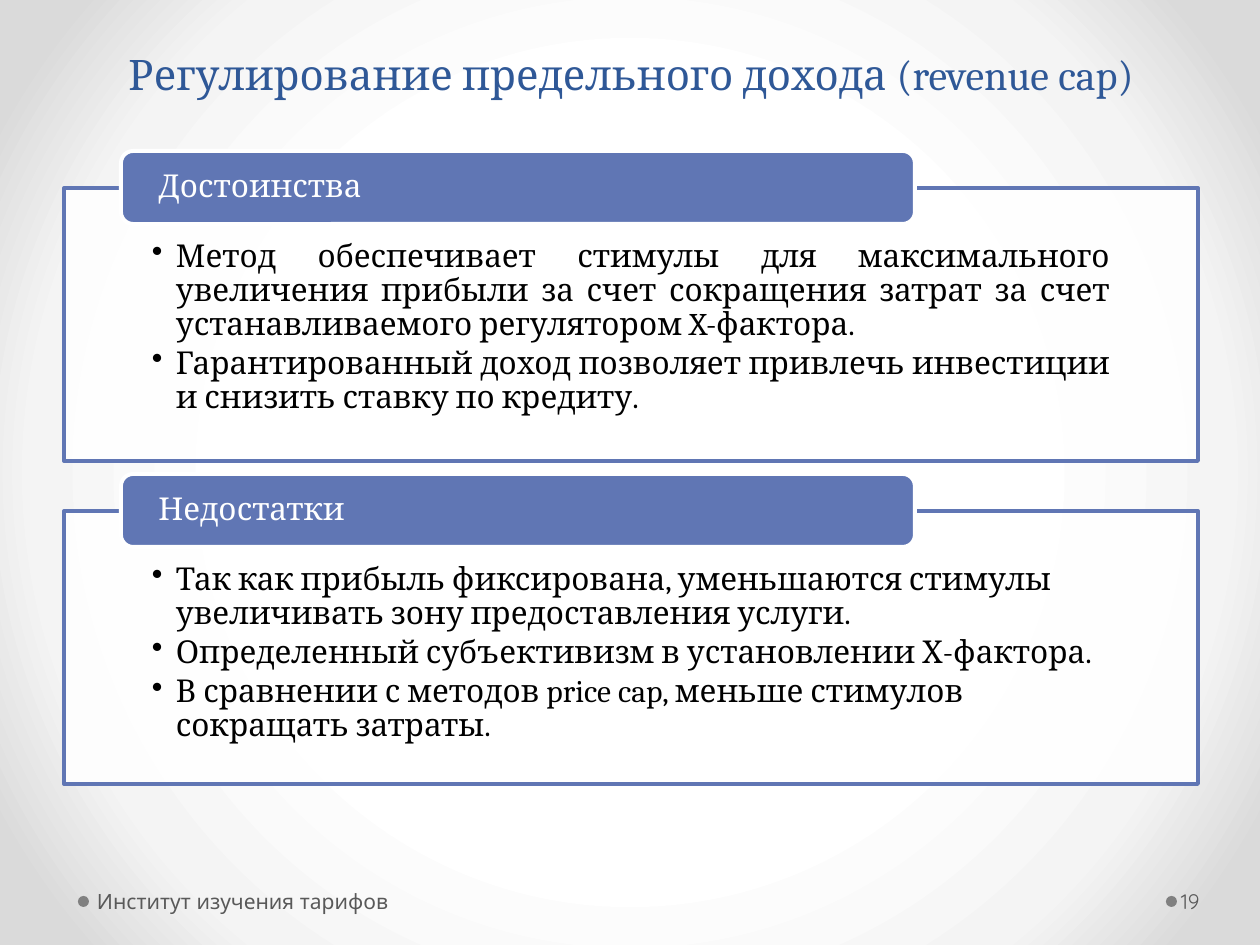
from dataclasses import dataclass

from lxml.etree import SubElement
from pptx import Presentation
from pptx.dml.color import RGBColor
from pptx.enum.shapes import MSO_SHAPE
from pptx.enum.text import MSO_ANCHOR, PP_ALIGN
from pptx.oxml import parse_xml
from pptx.oxml.ns import nsdecls, qn
from pptx.util import Emu, Pt

EMU_PER_PX = 914400 / 126


def px(length):
    return Emu(round(length * EMU_PER_PX))


@dataclass(frozen=True)
class Theme:
    serif: str = "Cambria"
    sans: str = "Quicksand"
    title: str = "2F5897"
    accent: str = "6076B4"
    white: str = "FFFFFF"
    body: str = "000000"
    muted: str = "595959"
    dot: str = "808080"
    backdrop: tuple = ((50, "FFFFFF"), (76, "F4F4F4"), (92, "DADADA"))
    title_size: int = 24
    body_size: int = 18
    footer_size: int = 12
    border: float = 2.25
    panel_opacity: int = 90


class SlideBuilder:
    def __init__(self, slide, theme):
        self.slide = slide
        self.theme = theme

    def background(self):
        self.slide.background.fill.gradient()
        gradient = self.slide.element.find(".//" + qn("a:gradFill"))
        stops = "".join(
            f'<a:gs pos="{position * 1000}"><a:srgbClr val="{color}"/></a:gs>'
            for position, color in self.theme.backdrop
        )
        radial = parse_xml(
            f'<a:gradFill {nsdecls("a")} rotWithShape="1"><a:gsLst>{stops}</a:gsLst>'
            '<a:path path="circle"><a:fillToRect l="50000" t="50000" r="50000" b="50000"/>'
            "</a:path></a:gradFill>"
        )
        gradient.getparent().replace(gradient, radial)

    def shape(self, preset, box, fill, line=None):
        shape = self.slide.shapes.add_shape(preset, *map(px, box))
        shape.shadow.inherit = False
        shape.fill.solid()
        shape.fill.fore_color.rgb = RGBColor.from_string(fill)
        if line:
            shape.line.color.rgb = RGBColor.from_string(line)
            shape.line.width = Pt(self.theme.border)
        else:
            shape.line.fill.background()
        return shape

    def frame(self, shape, insets, anchor):
        frame = shape.text_frame
        frame.word_wrap = True
        frame.vertical_anchor = anchor
        frame.margin_left, frame.margin_top, frame.margin_right, frame.margin_bottom = map(px, insets)
        return frame

    def add_text(self, paragraph, text, size, color, font, align=PP_ALIGN.LEFT):
        paragraph.alignment = align
        run = paragraph.add_run()
        run.text = text
        run.font.size = Pt(size)
        run.font.name = font
        run.font.color.rgb = RGBColor.from_string(color)

    def label(self, box, text, size, color, font, insets, anchor=MSO_ANCHOR.MIDDLE, align=PP_ALIGN.LEFT):
        textbox = self.slide.shapes.add_textbox(*map(px, box))
        frame = self.frame(textbox, insets, anchor)
        self.add_text(frame.paragraphs[0], text, size, color, font, align)

    def panel(self, box, points, align):
        theme = self.theme
        panel = self.shape(MSO_SHAPE.RECTANGLE, box, theme.white, theme.accent)
        color = panel.element.spPr.find(qn("a:solidFill"))[0]
        SubElement(color, qn("a:alpha"), val=str(theme.panel_opacity * 1000))
        frame = self.frame(panel, (88, 52, 88, 18), MSO_ANCHOR.TOP)
        for index, point in enumerate(points):
            paragraph = frame.add_paragraph() if index else frame.paragraphs[0]
            self.add_text(paragraph, point, theme.body_size, theme.body, theme.serif, align)
            paragraph.line_spacing = 0.9
            paragraph.space_after = Pt(3)
            properties = paragraph._p.get_or_add_pPr()
            properties.set("marL", str(px(24)))
            properties.set("indent", str(px(-24)))
            SubElement(properties, qn("a:buChar"), char="•")

    def heading(self, box, text):
        theme = self.theme
        heading = self.shape(MSO_SHAPE.ROUNDED_RECTANGLE, box, theme.accent, theme.white)
        frame = self.frame(heading, (34, 0, 34, 0), MSO_ANCHOR.MIDDLE)
        self.add_text(frame.paragraphs[0], text, theme.body_size, theme.white, theme.serif)
        frame.paragraphs[0].line_spacing = 0.9

    def footer(self, dot_left, box, text, insets):
        theme = self.theme
        self.shape(MSO_SHAPE.OVAL, (dot_left, 896, 11, 11), theme.dot)
        self.label(box, text, theme.footer_size, theme.muted, theme.sans, insets)


SECTIONS = (
    ("Достоинства", PP_ALIGN.JUSTIFY, (
        "Метод обеспечивает стимулы для максимального увеличения прибыли за счет "
        "сокращения затрат за счет устанавливаемого регулятором X-фактора.",
        "Гарантированный доход позволяет привлечь инвестиции и снизить ставку по кредиту.",
    )),
    ("Недостатки", PP_ALIGN.LEFT, (
        "Так как прибыль фиксирована, уменьшаются стимулы увеличивать зону предоставления услуги.",
        "Определенный субъективизм в установлении Х-фактора.",
        "В сравнении с методов price cap, меньше стимулов сокращать затраты.",
    )),
)


def main():
    theme = Theme()
    presentation = Presentation()
    presentation.slide_width, presentation.slide_height = px(1260), px(945)
    slide = presentation.slides.add_slide(presentation.slide_layouts[6])
    builder = SlideBuilder(slide, theme)

    builder.background()
    builder.label(
        (64, 26, 1134, 79), "Регулирование предельного дохода (revenue cap)",
        theme.title_size, theme.title, theme.serif, (13, 6, 13, 6),
        MSO_ANCHOR.BOTTOM, PP_ALIGN.CENTER,
    )
    for index, (heading, align, points) in enumerate(SECTIONS):
        top = 188 + index * 323
        builder.panel((64, top, 1134, 273), points, align)
        builder.heading((121, top - 37, 794, 73), heading)
    builder.footer(78, (91, 876, 392, 50), "Институт изучения тарифов", (6, 6, 13, 6))
    builder.footer(1166, (1177, 876, 77, 50), "19", (4, 6, 6, 6))

    presentation.save("out.pptx")


if __name__ == "__main__":
    main()
